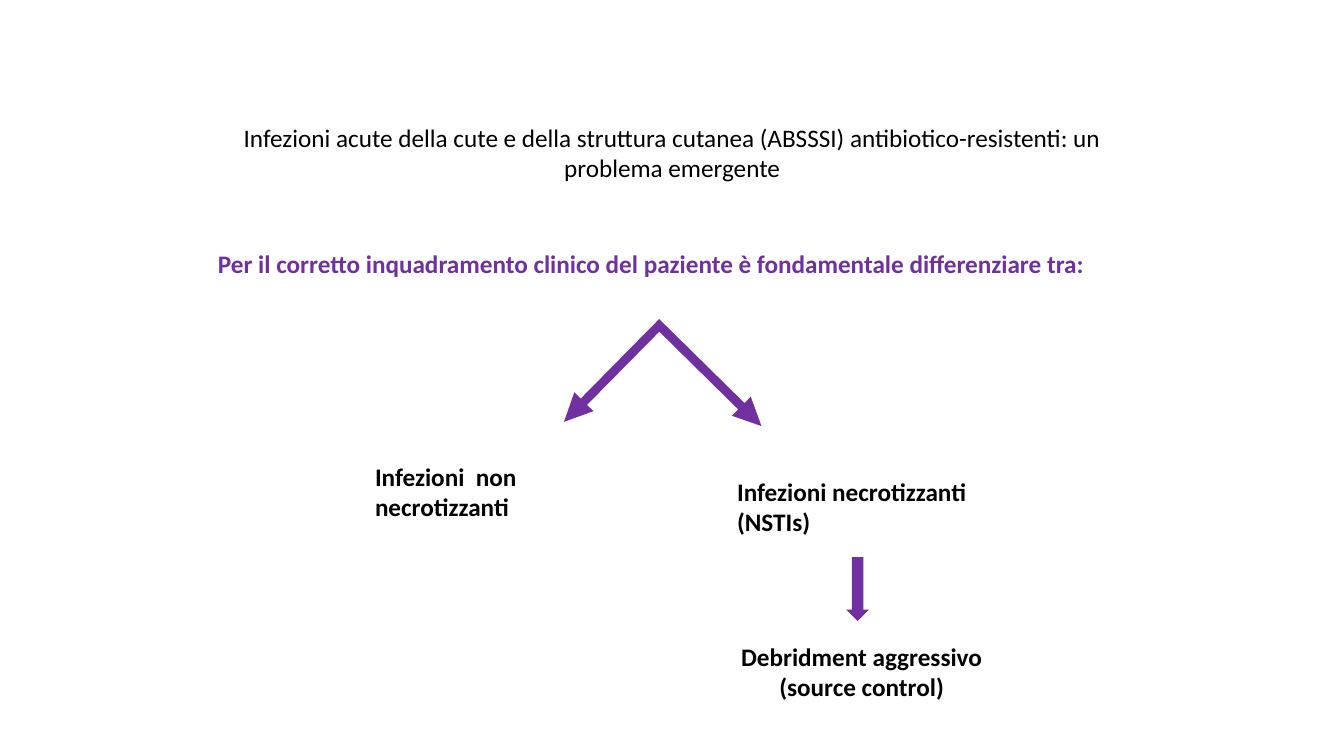
from pptx import Presentation
from pptx.dml.color import RGBColor
from pptx.enum.shapes import MSO_SHAPE as Shape
from pptx.enum.text import MSO_ANCHOR as Anchor, MSO_AUTO_SIZE as AutoSize, PP_ALIGN as Align
from pptx.util import Inches, Pt

COLORS = {"text": "000000", "accent": "7030A0"}
FONT, SIZE = "Calibri", 18
PX = 914400 / 100.8

# Content: lines, box (left, top, width, height in px), alignment, colour
TITLE = (["Infezioni acute della cute e della struttura cutanea (ABSSSI) "
          "antibiotico-resistenti: un problema emergente"],
         (231, 117, 882, 72), Align.CENTER, "text")
LABELS = [
    (["Per il corretto inquadramento clinico del paziente è fondamentale differenziare tra:"],
     (208, 243, 913, 72), Align.LEFT, "accent"),
    (["Infezioni  non necrotizzanti"], (365, 456, 181, 102), Align.LEFT, "text"),
    (["Infezioni necrotizzanti (NSTIs)"], (727, 471, 299, 72), Align.LEFT, "text"),
    (["Debridment aggressivo", "(source control)"], (712, 636, 299, 72), Align.CENTER, "text"),
]
# Arrows: shape, box, rotation, adjustments
ARROWS = [
    (Shape.LEFT_UP_ARROW, (584, 340, 157, 149), 224.6, (0.06, 0.09, 0.19)),
    (Shape.DOWN_ARROW, (846, 557, 23, 64), 0, (0.5, 0.5)),
]


def emu(box):
    return [round(length * PX) for length in box]


def write_text(shape, lines, align, color, bold):
    frame = shape.text_frame
    frame.word_wrap = True
    frame.auto_size = AutoSize.NONE
    frame.vertical_anchor = Anchor.TOP
    frame.text = "\n".join(lines)
    for paragraph in frame.paragraphs:
        paragraph.alignment = align
        font = paragraph.font
        font.name, font.size, font.bold = FONT, Pt(SIZE), bold
        font.color.rgb = RGBColor.from_string(COLORS[color])


presentation = Presentation()
presentation.slide_width, presentation.slide_height = Inches(13.33), Inches(7.5)
slide = presentation.slides.add_slide(presentation.slide_layouts[5])

# Title
lines, box, align, color = TITLE
title = slide.shapes.title
title.left, title.top, title.width, title.height = emu(box)
write_text(title, lines, align, color, bold=False)

# Arrows
for kind, box, rotation, adjustments in ARROWS:
    arrow = slide.shapes.add_shape(kind, *emu(box))
    arrow.rotation = rotation
    for index, value in enumerate(adjustments):
        arrow.adjustments[index] = value
    arrow.shadow.inherit = False
    arrow.fill.solid()
    arrow.fill.fore_color.rgb = RGBColor.from_string(COLORS["accent"])
    arrow.line.fill.background()

# Labels
for lines, box, align, color in LABELS:
    write_text(slide.shapes.add_textbox(*emu(box)), lines, align, color, bold=True)

presentation.save("out.pptx")
